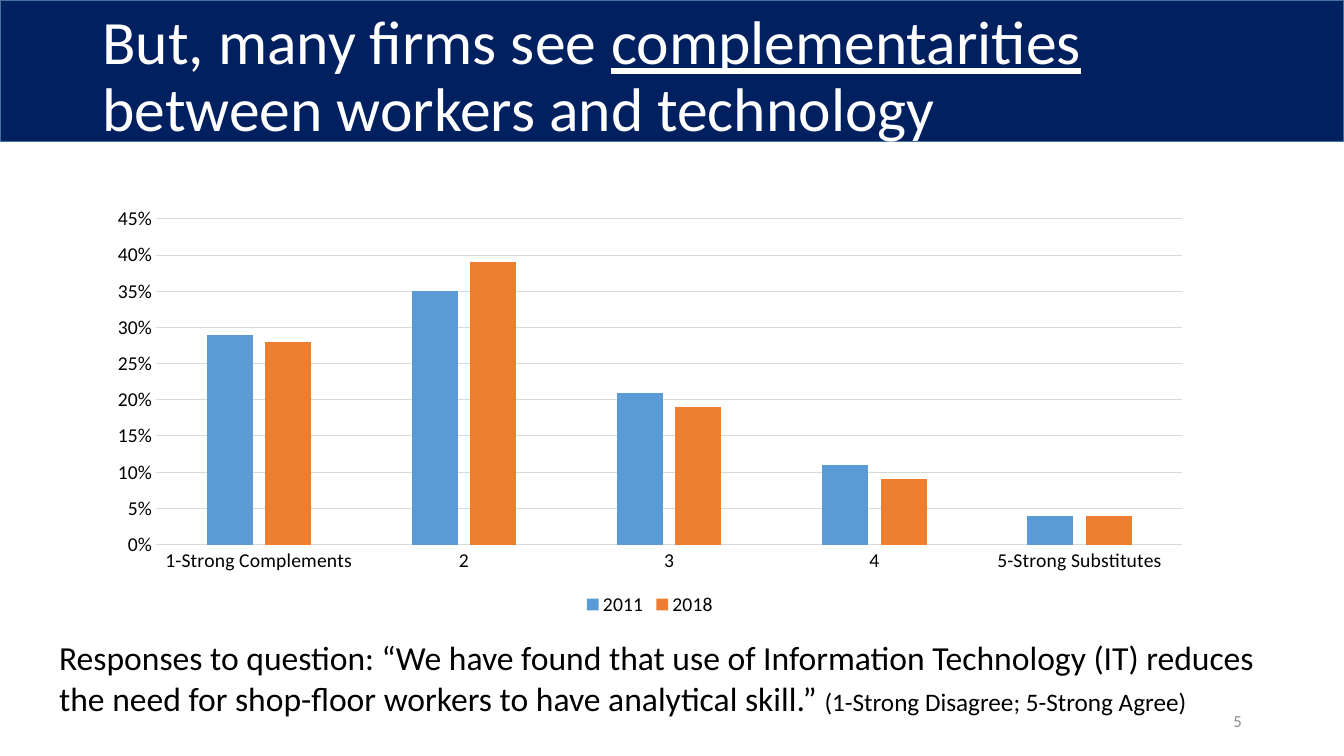
from collections import namedtuple
from dataclasses import dataclass

from lxml.etree import SubElement
from pptx import Presentation
from pptx.chart.data import CategoryChartData
from pptx.dml.color import RGBColor
from pptx.enum.chart import XL_CHART_TYPE, XL_LEGEND_POSITION, XL_TICK_MARK
from pptx.enum.shapes import MSO_SHAPE
from pptx.enum.text import MSO_ANCHOR, MSO_AUTO_SIZE, PP_ALIGN
from pptx.oxml.ns import qn
from pptx.util import Cm, Pt

Box = namedtuple("Box", "left top width height")


@dataclass(frozen=True)
class Theme:
    font: str = "Calibri"
    navy: str = "002060"
    edge: str = "43739E"
    white: str = "FFFFFF"
    black: str = "000000"
    muted: str = "8C8C8C"
    grid: str = "D9D9D9"
    bars: tuple = ("5B9BD5", "ED7D31")
    title: int = 44
    note: int = 24
    aside: int = 18
    chart: int = 14
    number: int = 12


THEME = Theme()
CATEGORIES = ["1-Strong Complements", "2", "3", "4", "5-Strong Substitutes"]
SHARES = {
    "2011": [0.29, 0.35, 0.21, 0.11, 0.04],
    "2018": [0.28, 0.39, 0.19, 0.09, 0.04],
}


def apply(target, values):
    for name, value in values.items():
        setattr(target, name, value)


def place(box):
    return [Cm(length) for length in box]


def style_font(font, size, color, **values):
    apply(font, {"name": THEME.font, "size": Pt(size), **values})
    font.color.rgb = RGBColor.from_string(color)


def style_line(line, color, width):
    line.color.rgb = RGBColor.from_string(color)
    line.width = Pt(width)


def add_span(para, text, size, color, **values):
    span = para.add_run()
    span.text = text
    style_font(span.font, size, color, **values)


def add_text_box(page, box, **frame_values):
    frame = page.shapes.add_textbox(*place(box)).text_frame
    apply(frame, {"word_wrap": True, **frame_values})
    return frame.paragraphs[0]


def add_header(page, box):
    band = page.shapes.add_shape(MSO_SHAPE.RECTANGLE, *place(box))
    band.shadow.inherit = False
    band.fill.solid()
    band.fill.fore_color.rgb = RGBColor.from_string(THEME.navy)
    style_line(band.line, THEME.edge, 1)

    title = page.shapes.title
    title._element.addprevious(band._element)
    title_box = Box(box.left + 2.33, box.top + 0.13, box.width - 4.66, box.height + 0.12)
    apply(title, dict(zip(Box._fields, place(title_box))))
    apply(title.text_frame, {
        "word_wrap": True,
        "auto_size": MSO_AUTO_SIZE.NONE,
        "vertical_anchor": MSO_ANCHOR.MIDDLE,
    })
    para = title.text_frame.paragraphs[0]
    apply(para, {"alignment": PP_ALIGN.LEFT, "line_spacing": 0.9})
    for text, underline in [
        ("But, many firms see ", False),
        ("complementarities", True),
        (" between workers and technology", False),
    ]:
        add_span(para, text, THEME.title, THEME.white, underline=underline)


def add_share_chart(page, box):
    data = CategoryChartData(number_format="0%")
    data.categories = CATEGORIES
    for year, shares in SHARES.items():
        data.add_series(year, shares)
    chart = page.shapes.add_chart(
        XL_CHART_TYPE.COLUMN_CLUSTERED, *place(box), data).chart
    apply(chart, {"has_title": False, "has_legend": True})
    apply(chart.legend, {
        "position": XL_LEGEND_POSITION.BOTTOM,
        "include_in_layout": False,
    })
    style_font(chart.font, THEME.chart, THEME.black)

    plot = chart.plots[0]
    apply(plot, {"gap_width": 219, "overlap": -27, "vary_by_categories": False})
    for series, color in zip(plot.series, THEME.bars):
        series.format.fill.solid()
        series.format.fill.fore_color.rgb = RGBColor.from_string(color)

    ticks = {
        "major_tick_mark": XL_TICK_MARK.NONE,
        "minor_tick_mark": XL_TICK_MARK.NONE,
    }
    apply(chart.category_axis, ticks)
    style_line(chart.category_axis.format.line, THEME.grid, 0.75)
    value_axis = chart.value_axis
    apply(value_axis, {
        **ticks,
        "minimum_scale": 0,
        "maximum_scale": 0.45,
        "major_unit": 0.05,
        "has_major_gridlines": True,
    })
    apply(value_axis.tick_labels, {
        "number_format": "0%",
        "number_format_is_linked": False,
    })
    value_axis.format.line.fill.background()
    style_line(value_axis.major_gridlines.format.line, THEME.grid, 0.75)


def add_question(page, box):
    para = add_text_box(page, box, auto_size=MSO_AUTO_SIZE.SHAPE_TO_FIT_TEXT)
    add_span(
        para,
        "Responses to question: “We have found that use of Information Technology (IT) "
        "reduces the need for shop-floor workers to have analytical skill.” ",
        THEME.note, THEME.black)
    add_span(para, "(1-Strong Disagree; 5-Strong Agree)", THEME.aside, THEME.black)


def add_page_number(page, box):
    para = add_text_box(page, box, vertical_anchor=MSO_ANCHOR.MIDDLE)
    para.alignment = PP_ALIGN.RIGHT
    add_span(para, "5", THEME.number, THEME.muted)


def main():
    deck = Presentation()
    apply(deck, {"slide_width": Cm(33.87), "slide_height": Cm(19.05)})
    page = deck.slides.add_slide(deck.slide_layouts[5])
    add_header(page, Box(0, 0, 33.87, 3.56))
    add_question(page, Box(1.24, 15.93, 30.89, 2.31))
    add_page_number(page, Box(23.93, 17.65, 7.62, 1.02))
    add_share_chart(page, Box(2.41, 5, 27.94, 10.64))
    deck.save("out.pptx")


if __name__ == "__main__":
    main()
